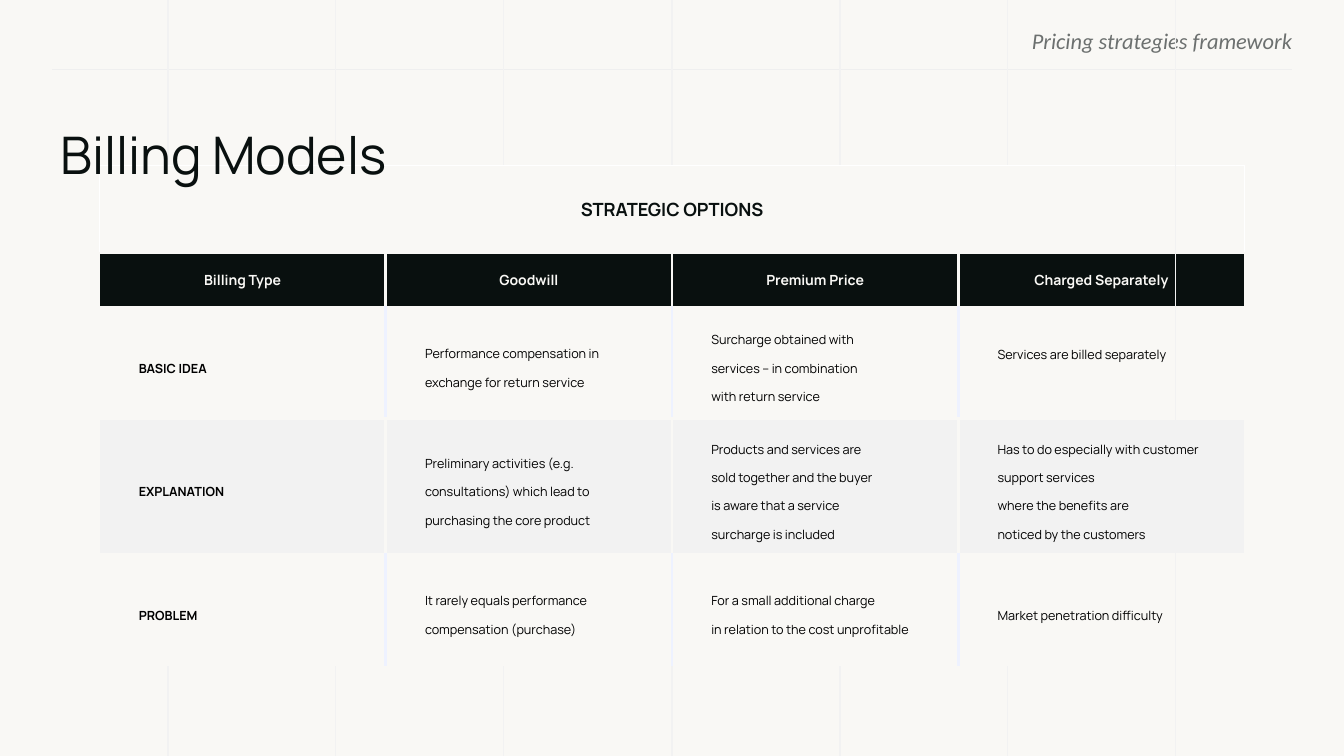
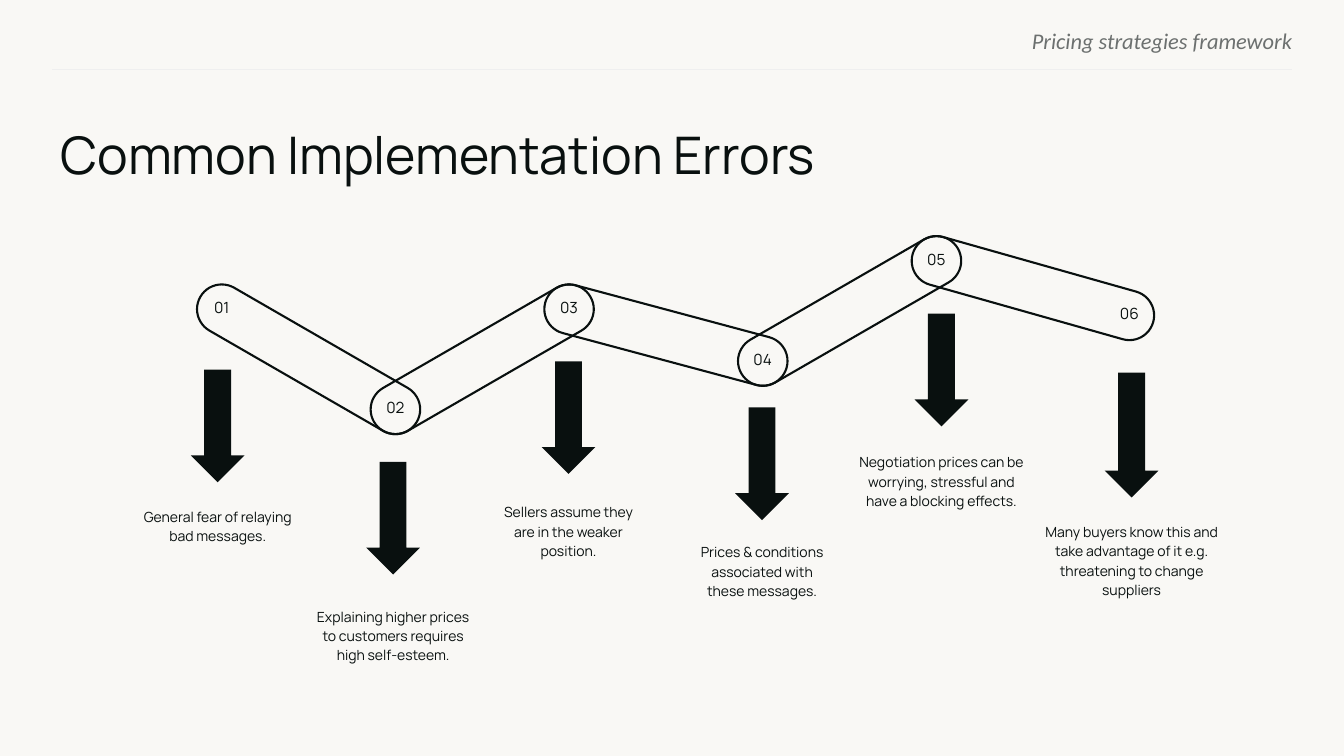
from math import atan2, cos, degrees, hypot, radians, sin

from lxml import etree
from pptx import Presentation
from pptx.dml.color import RGBColor
from pptx.enum.shapes import MSO_CONNECTOR, MSO_SHAPE
from pptx.enum.text import MSO_ANCHOR, PP_ALIGN
from pptx.oxml.ns import qn
from pptx.util import Inches, Pt

LEFT, CENTER, RIGHT = PP_ALIGN.LEFT, PP_ALIGN.CENTER, PP_ALIGN.RIGHT
MIDDLE = MSO_ANCHOR.MIDDLE
STRAIGHT = MSO_CONNECTOR.STRAIGHT
PILL, OVAL, ARROW = MSO_SHAPE.ROUNDED_RECTANGLE, MSO_SHAPE.OVAL, MSO_SHAPE.DOWN_ARROW

HEX = {"paper": "F9F8F5", "ink": "09100F", "grey": "6C706F", "rule": "EFEFEF",
       "grid": "F2F2F2", "band": "F2F2F2", "divider": "EEF2FF", "black": "000000"}
RGB = {name: RGBColor.from_string(value) for name, value in HEX.items()}

HEADER = {"name": "Carlito", "size": Pt(16), "italic": True}
TITLE = {"name": "Manrope", "size": Pt(37)}
TABLE_TITLE = {"name": "Manrope", "size": Pt(13), "bold": True}
TABLE_HEAD = {"name": "Manrope", "size": Pt(10), "bold": True}
ROW_HEAD = {"name": "Manrope", "size": Pt(9), "bold": True}
BODY = {"name": "Manrope", "size": Pt(9), "bold": False}
NUMBER = {"name": "Manrope", "size": Pt(11)}
CAPTION = {"name": "Manrope", "size": Pt(10)}

prs = Presentation()
W, H = prs.slide_width, prs.slide_height = Inches(13.33), Inches(7.5)


def shares(*values):
    """Turn alternating x and y percentages of the slide into EMU."""
    return [round(v * (H if i % 2 else W) / 100) for i, v in enumerate(values)]


def write(tf, text, fmt, color="ink", align=LEFT, spacing=1.0):
    tf.word_wrap = True
    p = tf.paragraphs[0]
    p.text, p.alignment, p.line_spacing = text, align, spacing
    for r in p.runs:
        for key, value in fmt.items():
            setattr(r.font, key, value)
        r.font.color.rgb = RGB[color]


# Shared background, header, rule and title
vertical_grid = [(100 * i / 8, 0, 100 * i / 8, 100) for i in range(1, 8)]
slides = []
for title, grid in (("Billing Models", vertical_grid),
                    ("Common Implementation Errors", [])):
    s = prs.slides.add_slide(prs.slide_layouts[6])
    s.background.fill.solid()
    s.background.fill.fore_color.rgb = RGB["paper"]
    slides.append(s)
    texts = [((57.6, 3.6, 38.55, 3.2), "Pricing strategies framework", HEADER, "grey", RIGHT),
             ((4.5, 16.27, 92.25, 9.07), title, TITLE, "ink", LEFT)]
    for place, text, fmt, color, align in texts:
        tf = s.shapes.add_textbox(*shares(*place)).text_frame
        tf.margin_left = tf.margin_right = tf.margin_top = tf.margin_bottom = 0
        write(tf, text, fmt, color, align)
    for i, ends in enumerate([(3.9, 9.2, 96.15, 9.2)] + grid):
        line = s.shapes.add_connector(STRAIGHT, *shares(*ends))
        line.line.color.rgb = RGB["grid" if i else "rule"]
        line.line.width = Pt(0.75)
        etree.SubElement(line._element.spPr, qn("a:effectLst"))

# Billing models table
ROWS = [
    ["STRATEGIC OPTIONS", "", "", ""],
    ["Billing Type", "Goodwill", "Premium Price", "Charged Separately"],
    ["BASIC IDEA",
     "Performance compensation in exchange for return service",
     "Surcharge obtained with\nservices – in combination\nwith return service",
     "Services are billed separately"],
    ["EXPLANATION",
     "Preliminary activities (e.g. consultations) which lead to purchasing the core product",
     "Products and services are\nsold together and the buyer\nis aware that a service\n"
     "surcharge is included",
     "Has to do especially with customer support services\nwhere the benefits are\n"
     "noticed by the customers"],
    ["PROBLEM",
     "It rarely equals performance compensation (purchase)",
     "For a small additional charge\nin relation to the cost unprofitable",
     "Market penetration difficulty"],
]
ROW_SHARES = [11.6, 7.2, 14.67, 18, 14.67]
ROW_FILLS = ["paper", "ink", "paper", "band", "paper"]
COL_SHARE = 21.3
LAST = 3

s = slides[0]
place = shares((100 - 4 * COL_SHARE) / 2, 21.87, 4 * COL_SHARE, sum(ROW_SHARES))
frame = s.shapes.add_table(len(ROWS), 4, *place)
s.shapes._spTree.remove(frame._element)
s.shapes._spTree.insert(-1, frame._element)
for shape in [x for x in s.shapes if x.has_text_frame and x.text_frame.text == "Billing Models"]:
    s.shapes._spTree.append(shape._element)
table = frame.table
table.first_row = table.horz_banding = False
for column in table.columns:
    column.width = round(W * COL_SHARE / 100)
for row, share in zip(table.rows, ROW_SHARES):
    row.height = round(H * share / 100)
table.cell(0, 0).merge(table.cell(0, LAST))

for i, texts in enumerate(ROWS):
    for j, text in enumerate(texts):
        cell = table.cell(i, j)
        cell.vertical_anchor = MIDDLE
        cell.margin_left = cell.margin_right = Inches(0.39) if i > 1 else 0
        cell.margin_top = cell.margin_bottom = 0
        cell.fill.solid()
        cell.fill.fore_color.rgb = RGB[ROW_FILLS[i]]
        if i == 0:
            write(cell.text_frame, text, TABLE_TITLE, "ink", CENTER)
            continue
        if i == 1:
            write(cell.text_frame, text, TABLE_HEAD, "paper", CENTER)
        else:
            write(cell.text_frame, text, BODY if j else ROW_HEAD, "black", LEFT, 1.64)
        inner = "divider" if i in (2, 4) else "paper"
        borders = [("a:lnL", j == 0, inner), ("a:lnR", j == LAST, inner),
                   ("a:lnT", False, "paper"), ("a:lnB", i == 4, "paper")]
        for k, (tag, outer, color) in enumerate(borders):
            ln = etree.Element(qn(tag), w=str(Pt(1 if outer else 2.25)))
            fill = etree.SubElement(ln, qn("a:solidFill"))
            etree.SubElement(fill, qn("a:srgbClr"), val=HEX["paper" if outer else color])
            cell._tc.get_or_add_tcPr().insert(k, ln)
table.cell(2, LAST).margin_bottom = Inches(0.28)

# Chain of implementation errors: equal legs, each turned by its own angle
LEG, THICK, DOT = (round(W * share / 100) for share in (14.92, 3.68, 2.85))
nodes = [tuple(shares(16.5, 40.9))]
for angle in (30, -30, 15, -30, 15.8):
    x, y = nodes[-1]
    nodes.append((x + LEG * cos(radians(angle)), y + LEG * sin(radians(angle))))

s = slides[1]
for (x1, y1), (x2, y2) in zip(nodes, nodes[1:]):
    length = hypot(x2 - x1, y2 - y1) + THICK
    pill = s.shapes.add_shape(PILL, round((x1 + x2 - length) / 2),
                              round((y1 + y2 - THICK) / 2), round(length), THICK)
    pill.adjustments[0] = 0.5
    pill.rotation = degrees(atan2(y2 - y1, x2 - x1))
    pill.shadow.inherit = False
    pill.fill.background()
    pill.line.color.rgb = RGB["ink"]
    pill.line.width = Pt(1.5)

# Centre, arrow top, arrow height, caption top, caption width, caption
ERRORS = [
    (16.2, 48.9, 14.9, 66.9, 12.4, "General fear of relaying bad messages."),
    (29.25, 61.1, 14.9, 80.1, 11.6,
     "Explaining higher prices to customers requires high self-esteem."),
    (42.3, 47.8, 14.9, 66.3, 11.2, "Sellers assume they are in the weaker position."),
    (56.7, 53.9, 14.9, 71.6, 9.4, "Prices & conditions associated with these messages."),
    (70.05, 41.5, 14.9, 59.7, 12.4,
     "Negotiation prices can be worrying, stressful and have a blocking effects."),
    (84.2, 49.3, 16.5, 68.9, 14.55,
     "Many buyers know this and take advantage of it e.g. threatening to change suppliers"),
]
ARROW_W = 4
for n, ((x, y), error) in enumerate(zip(nodes, ERRORS), 1):
    center, top, height, caption_top, width, caption = error
    arrow = s.shapes.add_shape(ARROW, *shares(center - ARROW_W / 2, top, ARROW_W, height))
    dot = s.shapes.add_shape(OVAL, round(x - DOT / 2), round(y - DOT / 2), DOT, DOT)
    for shape, color in ((arrow, "ink"), (dot, "paper")):
        shape.shadow.inherit = False
        shape.fill.solid()
        shape.fill.fore_color.rgb = RGB[color]
        shape.line.fill.background()
    note = s.shapes.add_textbox(*shares(center - width / 2, caption_top, width, 10))
    for tf in (dot.text_frame, note.text_frame):
        tf.margin_left = tf.margin_right = tf.margin_top = tf.margin_bottom = 0
    dot.text_frame.vertical_anchor = MIDDLE
    write(dot.text_frame, f"{n:02}", NUMBER, "ink", CENTER, 0.8)
    write(note.text_frame, caption, CAPTION, "ink", CENTER, 1.15)

prs.save("out.pptx")
